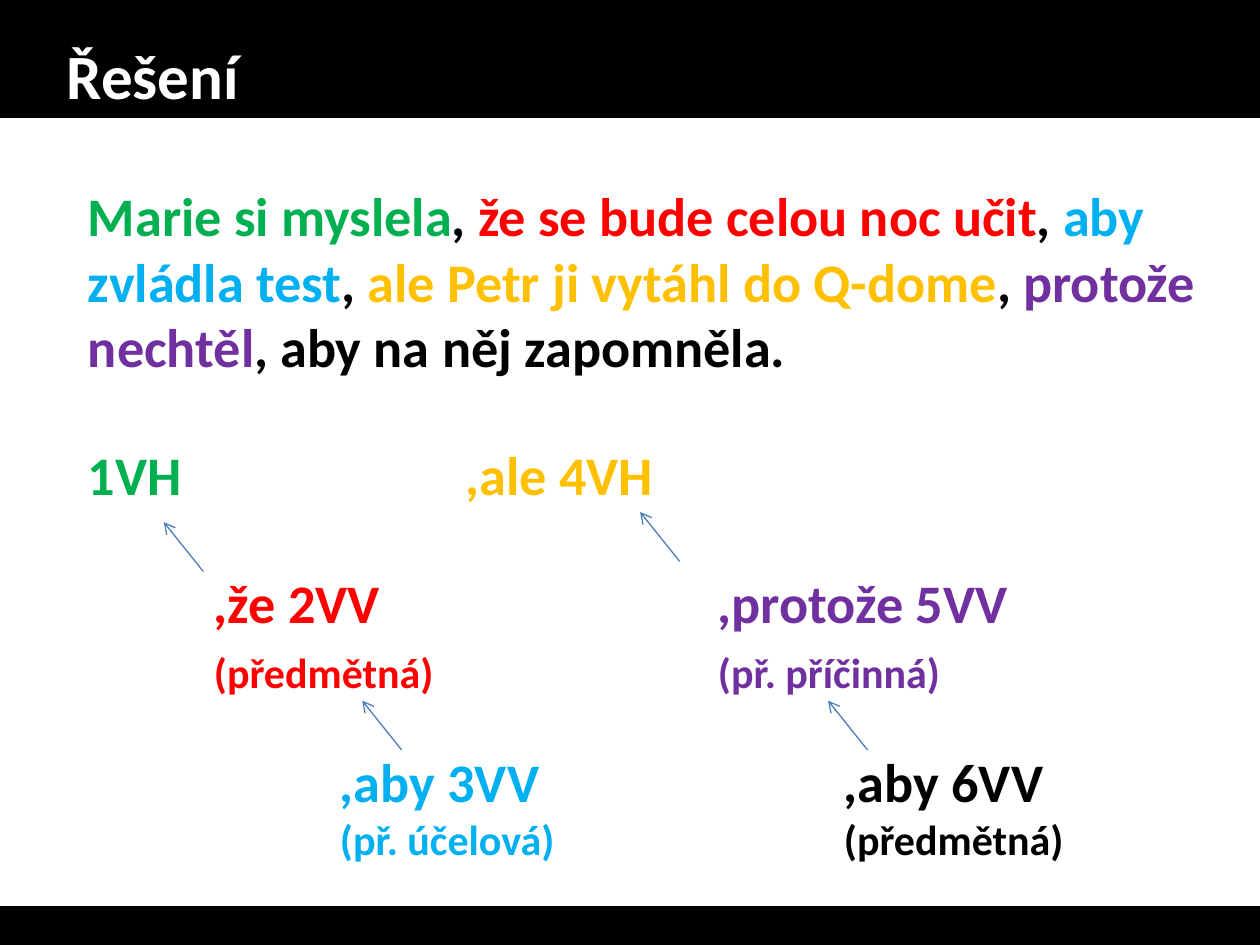
"""Build the slide with the solved Czech sentence diagram."""
from lxml.etree import SubElement
from pptx import Presentation
from pptx.dml.color import RGBColor
from pptx.enum.shapes import MSO_CONNECTOR as CONN, MSO_SHAPE as SHAPE
from pptx.enum.text import MSO_ANCHOR as ANCHOR
from pptx.oxml.ns import qn
from pptx.util import Pt

BLACK = RGBColor(0, 0, 0)
WHITE = RGBColor(255, 255, 255)
GREEN = RGBColor(0, 176, 80)
RED = RGBColor(255, 0, 0)
BLUE = RGBColor(0, 176, 240)
GOLD = RGBColor(255, 192, 0)
PURPLE = RGBColor(112, 48, 160)
ARROW = RGBColor(75, 126, 188)

FONT = "Calibri"
TITLE, BIG, SMALL = 36, 31, 24
TAB, TABS = 72, 8
WIDTH, HEIGHT = 720, 540

BANDS = [(0, 66.5), (519, 21)]
HEADING = [(0, [("Řešení", WHITE, TITLE)])]
SOLUTION = [
    (0, [("Marie si myslela", GREEN, BIG), (", ", BLACK, BIG),
         ("že se bude celou noc učit", RED, BIG), (", ", BLACK, BIG),
         ("aby zvládla test", BLUE, BIG), (", ", BLACK, BIG),
         ("ale Petr ji vytáhl do Q-dome", GOLD, BIG), (", ", BLACK, BIG),
         ("protože nechtěl", PURPLE, BIG),
         (", aby na něj zapomněla.", BLACK, BIG)]),
    (36, [("1VH\t\t\t", GREEN, BIG), (",ale 4VH", GOLD, BIG)]),
    (36, [("\t", GREEN, BIG), (",že 2VV\t\t\t", RED, BIG),
          (",protože 5VV", PURPLE, BIG)]),
    (0, [("\t", GREEN, BIG), ("(předmětná)\t\t\t", RED, SMALL),
         ("(př. příčinná)", PURPLE, SMALL)]),
    (28, [("\t\t", GREEN, SMALL), (",aby 3VV\t\t\t", BLUE, BIG),
          (",aby 6VV", BLACK, BIG)]),
    (0, [("\t\t", GREEN, SMALL), ("(př. účelová)\t\t\t", BLUE, SMALL),
         ("(předmětná)", BLACK, SMALL)]),
]
ARROW_TIPS = [(93.6, 298.4), (365.8, 292.6), (207, 400.4), (473.2, 400.4)]
ARROW_DX, ARROW_DY = 22.6, 28.2


def add_band(s, top, height):
    sp = s.shapes.add_shape(SHAPE.RECTANGLE, 0, Pt(top), Pt(WIDTH), Pt(height))
    sp.shadow.inherit = False
    sp.fill.solid()
    sp.fill.fore_color.rgb = BLACK
    sp.line.color.rgb = BLACK
    sp.line.width = Pt(2)


def add_text(s, box, paragraphs, anchor):
    tf = s.shapes.add_textbox(*map(Pt, box)).text_frame
    tf.word_wrap = True
    tf.vertical_anchor = anchor
    for i, (gap, runs) in enumerate(paragraphs):
        p = tf.add_paragraph() if i else tf.paragraphs[0]
        p.space_before = Pt(gap)
        if any("\t" in text for text, _, _ in runs):
            stops = SubElement(p._p.get_or_add_pPr(), qn("a:tabLst"))
            for n in range(1, TABS + 1):
                SubElement(stops, qn("a:tab"), pos=str(Pt(n * TAB)), algn="l")
        for text, color, size in runs:
            r = p.add_run()
            r.text = text
            r.font.name = FONT
            r.font.size = Pt(size)
            r.font.bold = True
            r.font.color.rgb = color


def add_arrow(s, x, y):
    ends = (x + ARROW_DX, y + ARROW_DY, x, y)
    cn = s.shapes.add_connector(CONN.STRAIGHT, *map(Pt, ends))
    cn.line.color.rgb = ARROW
    cn.line.width = Pt(0.75)
    SubElement(cn.line._get_or_add_ln(), qn("a:tailEnd"), type="arrow")
    SubElement(cn._element.spPr, qn("a:effectLst"))


def main():
    prs = Presentation()
    prs.slide_width, prs.slide_height = Pt(WIDTH), Pt(HEIGHT)
    s = prs.slides.add_slide(prs.slide_layouts[6])
    for band in BANDS:
        add_band(s, *band)
    add_text(s, (31, 15, 612, 55.5), HEADING, ANCHOR.MIDDLE)
    add_text(s, (43.2, 100.8, 657.4, 414), SOLUTION, ANCHOR.TOP)
    for tip in ARROW_TIPS:
        add_arrow(s, *tip)
    prs.save("out.pptx")


if __name__ == "__main__":
    main()
